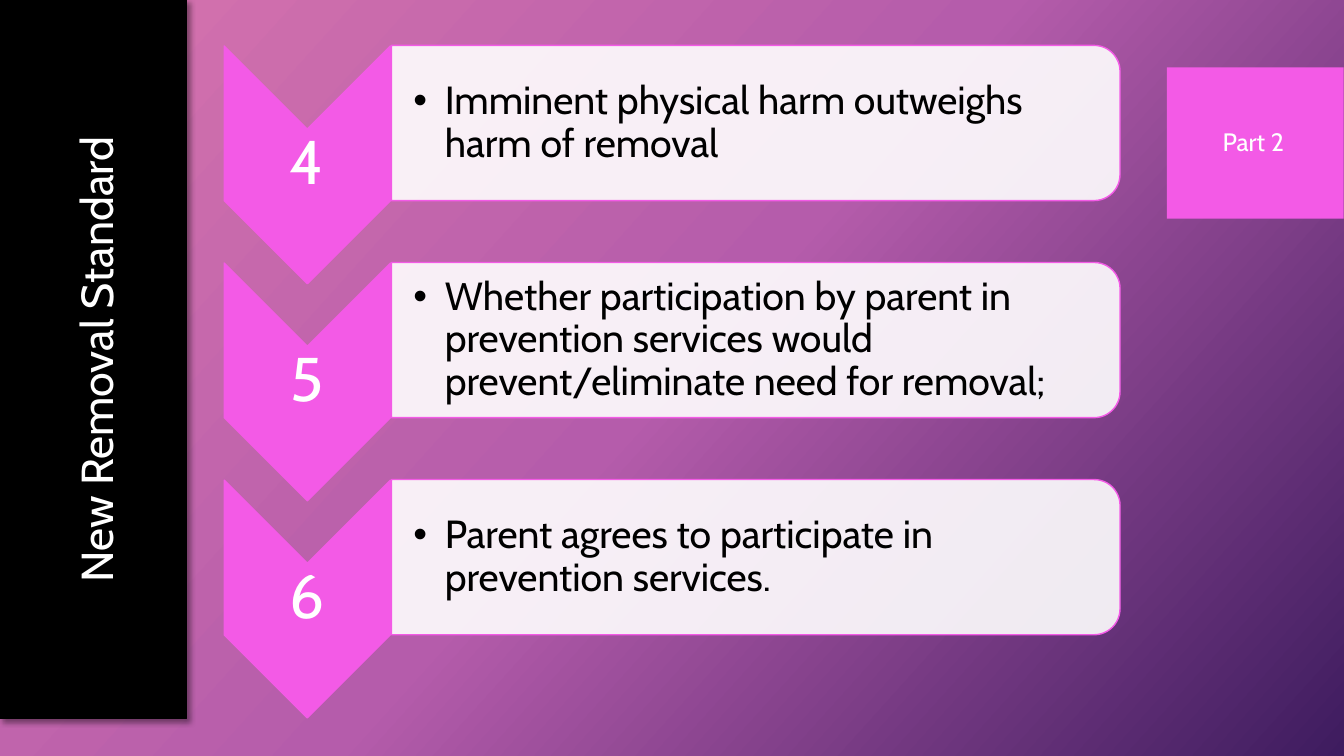
from lxml import etree
from pptx import Presentation
from pptx import util as u
from pptx.dml.color import RGBColor
from pptx.enum import shapes, text
from pptx.oxml import ns

BLACK = RGBColor(0x00, 0x00, 0x00)
WHITE = RGBColor(0xFF, 0xFF, 0xFF)
PINK = RGBColor(0xF3, 0x5A, 0xE6)
ROSE = RGBColor(0xD7, 0x74, 0xAD)
ORCHID = RGBColor(0xB5, 0x5C, 0xAB)
INDIGO = RGBColor(0x3E, 0x1C, 0x5F)

FONT = "Cabin"
COMPARISON_LAYOUT = 4
ROW_PITCH = 5.47
STEPS = [
    ("4", "Imminent physical harm outweighs harm of removal"),
    ("5", "Whether participation by parent in prevention services would "
          "prevent/eliminate need for removal;"),
    ("6", "Parent agrees to participate in prevention services."),
]


def add_xml(parent, tag, **attributes):
    return etree.SubElement(parent, ns.qn(tag), attributes)


def set_all(target, **values):
    for name, value in values.items():
        setattr(target, name, value)


def place(shape, left, top, width, height):
    set_all(shape, left=u.Cm(left), top=u.Cm(top), width=u.Cm(width), height=u.Cm(height))


def add_panel(page, kind, bounds, fill, line=None, rotation=0):
    panel = page.shapes.add_shape(kind, *map(u.Cm, bounds))
    panel.rotation = rotation
    panel.shadow.inherit = False
    panel.fill.solid()
    panel.fill.fore_color.rgb = fill
    if line is None:
        panel.line.fill.background()
    else:
        panel.line.color.rgb = line
        panel.line.width = u.Pt(1)
    return panel


def set_frame(box, margins=None, anchor=text.MSO_ANCHOR.MIDDLE):
    """Margins are left, top, right and bottom in centimetres."""
    frame = box.text_frame
    set_all(frame, word_wrap=True, auto_size=text.MSO_AUTO_SIZE.NONE, vertical_anchor=anchor)
    if margins:
        sides = ("margin_left", "margin_top", "margin_right", "margin_bottom")
        set_all(frame, **dict(zip(sides, map(u.Cm, margins))))
    return frame


def write(para, words, size, color, **layout):
    set_all(para, space_before=u.Pt(0), **layout)
    span = para.add_run()
    span.text = words
    set_all(span.font, name=FONT, size=u.Pt(size), bold=False)
    span.font.color.rgb = color


def set_background(page):
    page.background.fill.gradient()
    gradient = page.element.find(".//" + ns.qn("a:gradFill"))
    for child in list(gradient):
        gradient.remove(child)
    stops = add_xml(gradient, "a:gsLst")
    for position, color in ((0, ROSE), (50000, ORCHID), (100000, INDIGO)):
        stop = add_xml(stops, "a:gs", pos=str(position))
        add_xml(stop, "a:srgbClr", val=str(color))
    add_xml(gradient, "a:lin", ang=str(42 * 60000), scaled="0")


def add_number(page, number, drop):
    add_panel(page, shapes.MSO_SHAPE.CHEVRON, (4.75, 2.06 + drop, 5.99, 4.19), PINK, PINK, 90)
    box = page.shapes.add_textbox(*map(u.Cm, (5.64, 3.25 + drop, 4.19, 1.8)))
    frame = set_frame(box, (0.08,) * 4)
    write(frame.paragraphs[0], number, 44, WHITE,
          alignment=text.PP_ALIGN.CENTER, line_spacing=0.9)


def add_card(page, body, words, drop):
    """Put the list placeholder on a translucent card."""
    card = add_panel(page, shapes.MSO_SHAPE.ROUND_2_SAME_RECTANGLE,
                     (17.09, -6.08 + drop, 3.91, 18.36), WHITE, PINK, 90)
    add_xml(card.element.find(".//" + ns.qn("a:srgbClr")), "a:alpha", val="90000")

    page.shapes.element.append(body.element)
    place(body, 9.86, 1.34 + drop, 18.19, 3.53)
    para = set_frame(body, (0.56, 0.05, 0.05, 0.05)).paragraphs[0]
    properties = para._p.get_or_add_pPr()
    properties.set("marL", str(u.Cm(0.79)))
    properties.set("indent", str(u.Cm(-0.79)))
    add_xml(properties, "a:buFont", typeface="Arial")
    add_xml(properties, "a:buChar", char="•")
    write(para, words, 28, BLACK, level=1, line_spacing=0.9, alignment=text.PP_ALIGN.LEFT)


def add_title_bar(page):
    """Draw the shadowed bar and turn the title to read upwards on it."""
    bar = add_panel(page, shapes.MSO_SHAPE.RECTANGLE, (0, 0, 4.7, 18.11), BLACK, BLACK)
    effects = bar.element.spPr.find(ns.qn("a:effectLst"))
    shadow = add_xml(effects, "a:outerShdw", blurRad=str(u.Pt(4)), dist=str(u.Pt(3)),
                     dir=str(45 * 60000), algn="tl", rotWithShape="0")
    add_xml(add_xml(shadow, "a:srgbClr", val=str(BLACK)), "a:alpha", val="40000")

    title = page.shapes.title
    page.shapes.element.append(title.element)
    place(title, -4.6, 8.06, 14, 2)
    title.rotation = 270
    write(set_frame(title).paragraphs[0], "New Removal Standard", 32, WHITE,
          alignment=text.PP_ALIGN.CENTER)


def add_part_label(page):
    box = page.shapes.add_textbox(*map(u.Cm, (30.56, 3.07, 2.39, 1.02)))
    frame = set_frame(box, anchor=text.MSO_ANCHOR.TOP)
    write(frame.paragraphs[0], "Part 2", 18, WHITE)


def main():
    deck = Presentation()
    set_all(deck, slide_width=u.Cm(33.87), slide_height=u.Cm(19.05))
    page = deck.slides.add_slide(deck.slide_layouts[COMPARISON_LAYOUT])
    set_background(page)
    add_panel(page, shapes.MSO_SHAPE.RECTANGLE, (29.41, 1.7, 4.45, 3.81), PINK)

    bodies = [holder for holder in page.placeholders if holder.placeholder_format.idx > 0]
    for row, ((number, words), body) in enumerate(zip(STEPS, bodies)):
        add_number(page, number, row * ROW_PITCH)
        add_card(page, body, words, row * ROW_PITCH)
    for spare in bodies[len(STEPS):]:
        page.shapes.element.remove(spare.element)

    add_title_bar(page)
    add_part_label(page)
    deck.save("out.pptx")


if __name__ == "__main__":
    main()
